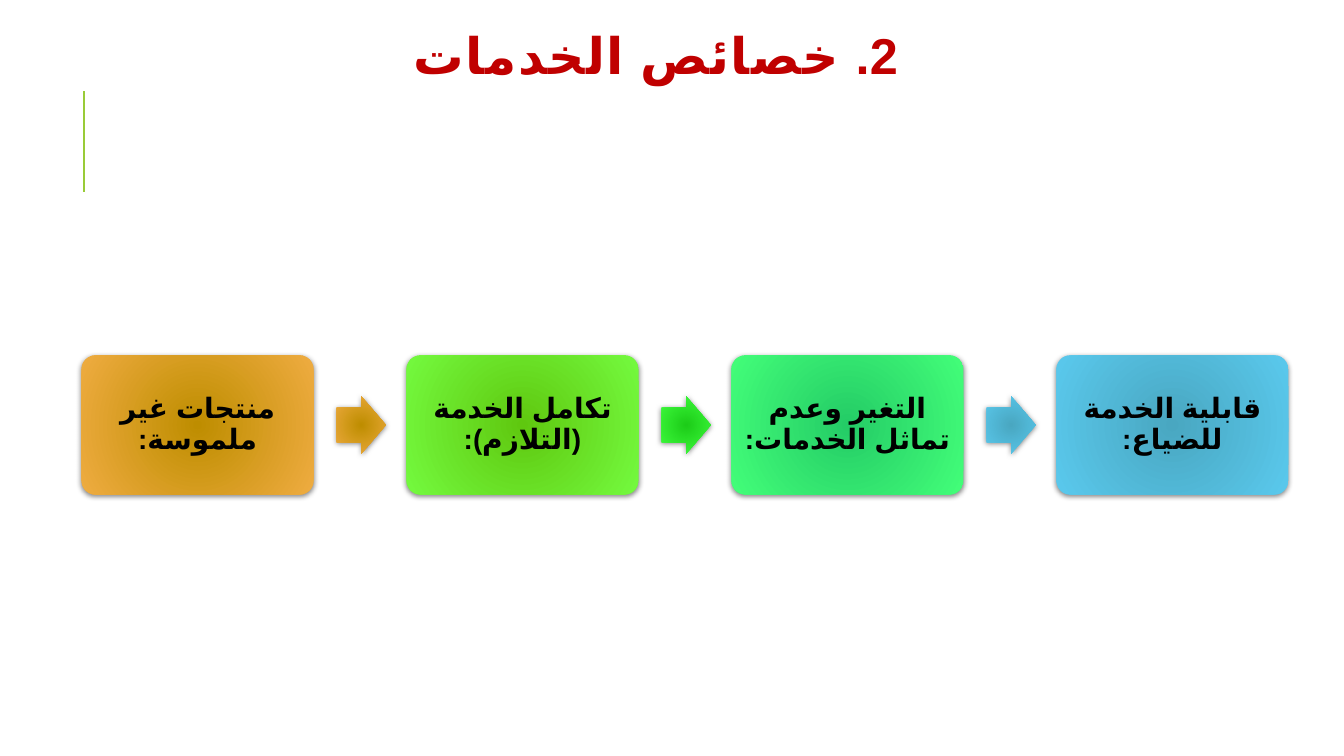
from lxml.etree import SubElement
from pptx import Presentation
from pptx.dml.color import RGBColor
from pptx.enum.shapes import MSO_CONNECTOR, MSO_SHAPE
from pptx.enum.text import MSO_ANCHOR, PP_ALIGN
from pptx.oxml import parse_xml
from pptx.oxml.ns import nsdecls, qn
from pptx.util import Pt

COLORS = {
    "title": "C00000", "text": "000000", "accent": "99CB38",
    "gold": ("BE8D00", "EFAC41"), "lime": ("5FC80F", "74FA3F"),
    "green": ("1CCC18", "41FE40"), "mint": ("24CC66", "43FE79"),
    "sky": ("49A7C1", "5AC9ED"),
}
# Text, box colour, colour of the arrow that follows
STEPS = [
    ("منتجات غير ملموسة:", "gold", "gold"),
    ("تكامل الخدمة (التلازم):", "lime", "green"),
    ("التغير وعدم تماثل الخدمات:", "mint", "sky"),
    ("قابلية الخدمة للضياع:", "sky", None),
]
LEFT, CENTER_Y, PITCH = 58.2, 303.6, 232.1
BOX_W, BOX_H = 165.8, 99.5
ARROW_W, ARROW_H, ARROW_OFFSET = 35.2, 41.1, 182.3
ARABIC_FONT = "Arial"


def add_rtl_text(tf, text, font, size, color, spacing):
    """Write one centred, bold, right-to-left paragraph and return its run."""
    tf.word_wrap = True
    tf.vertical_anchor = MSO_ANCHOR.MIDDLE
    p = tf.paragraphs[0]
    p.alignment = PP_ALIGN.CENTER
    p.line_spacing = spacing
    p._p.get_or_add_pPr().set("rtl", "1")
    r = p.add_run()
    r.text = text
    r.font.name = font
    r.font.size = Pt(size)
    r.font.bold = True
    r.font.color.rgb = RGBColor.from_string(COLORS[color])
    rPr = r._r.get_or_add_rPr()
    rPr.set("lang", "ar-SA")
    SubElement(rPr, qn("a:cs")).set("typeface", ARABIC_FONT)
    return r


def style_glow(sp, color):
    """Give the shape a radial gradient, no line and a soft shadow below."""
    inner, outer = COLORS[color]
    sp.line.fill.background()
    sp.shadow.inherit = False
    spPr = sp._element.spPr
    spPr.find(qn("a:prstGeom")).addnext(parse_xml(
        f'<a:gradFill {nsdecls("a")} rotWithShape="1"><a:gsLst>'
        f'<a:gs pos="0"><a:srgbClr val="{inner}"/></a:gs>'
        f'<a:gs pos="100000"><a:srgbClr val="{outer}"/></a:gs></a:gsLst>'
        '<a:path path="circle"><a:fillToRect l="100000" t="100000" '
        'r="100000" b="100000"/></a:path></a:gradFill>'))
    spPr.find(qn("a:effectLst")).append(parse_xml(
        f'<a:outerShdw {nsdecls("a")} blurRad="{Pt(4)}" dist="{Pt(1)}" '
        'dir="5400000" rotWithShape="0"><a:srgbClr val="000000">'
        '<a:alpha val="50000"/></a:srgbClr></a:outerShdw>'))


def add_glow_shape(slide, kind, x, w, h, adjustments, color):
    sp = slide.shapes.add_shape(kind, Pt(x), Pt(CENTER_Y - h / 2), Pt(w), Pt(h))
    for i, value in enumerate(adjustments):
        sp.adjustments[i] = value
    style_glow(sp, color)
    return sp


def add_step(slide, x, text, color):
    sp = add_glow_shape(slide, MSO_SHAPE.ROUNDED_RECTANGLE, x, BOX_W, BOX_H,
                        [0.1], color)
    tf = sp.text_frame
    tf.margin_left = tf.margin_right = Pt(5.8)
    tf.margin_top = tf.margin_bottom = Pt(5.8)
    add_rtl_text(tf, text, "Cabin", 20, "text", 0.9)


def add_accent_line(slide):
    line = slide.shapes.add_connector(
        MSO_CONNECTOR.STRAIGHT, Pt(60), Pt(137), Pt(60), Pt(65))
    line.line.color.rgb = RGBColor.from_string(COLORS["accent"])
    line.line.width = Pt(1.5)
    SubElement(line._element.spPr, qn("a:effectLst"))


def set_title(slide, text):
    title = slide.shapes.title
    title.left, title.top = Pt(80.6), Pt(13)
    title.width, title.height = Pt(765.4), Pt(59.8)
    r = add_rtl_text(title.text_frame, text, "Calibri", 36, "title", 0.8)
    r._r.get_or_add_rPr().set("spc", "100")


def main():
    prs = Presentation()
    prs.slide_width, prs.slide_height = Pt(960), Pt(540)
    slide = prs.slides.add_slide(prs.slide_layouts[5])
    add_accent_line(slide)
    set_title(slide, "2. خصائص الخدمات ")
    for i, (text, color, arrow_color) in enumerate(STEPS):
        x = LEFT + i * PITCH
        add_step(slide, x, text, color)
        if arrow_color:
            add_glow_shape(slide, MSO_SHAPE.RIGHT_ARROW, x + ARROW_OFFSET,
                           ARROW_W, ARROW_H, [0.6, 0.5], arrow_color)
    prs.save("out.pptx")


if __name__ == "__main__":
    main()
